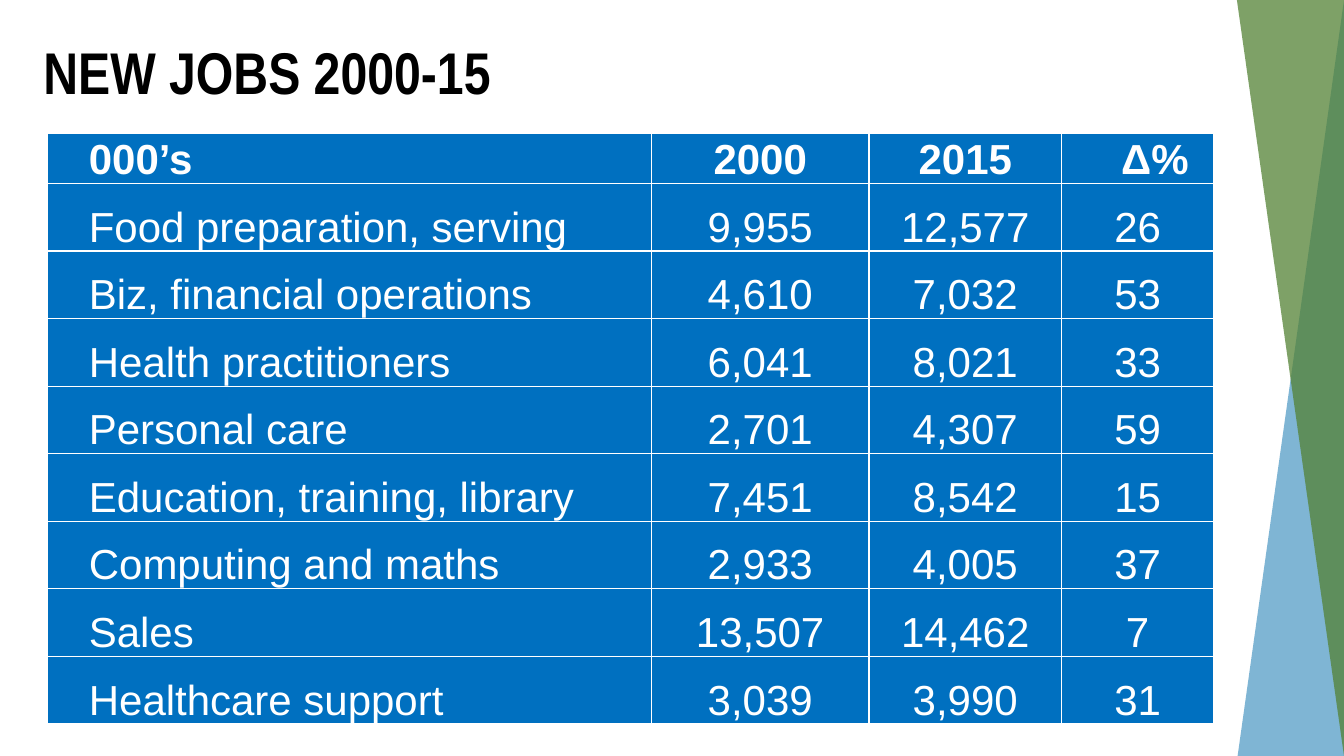
from pptx import Presentation
from pptx.dml.color import RGBColor
from pptx.enum.text import MSO_ANCHOR, MSO_AUTO_SIZE, PP_ALIGN
from pptx.oxml.ns import qn
from pptx.oxml.xmlchemy import OxmlElement
from pptx.util import Pt

LEFT, CENTER = PP_ALIGN.LEFT, PP_ALIGN.CENTER
MIDDLE, BOTTOM = MSO_ANCHOR.MIDDLE, MSO_ANCHOR.BOTTOM
NO_FIT = MSO_AUTO_SIZE.NONE

PAGE_WIDTH, PAGE_HEIGHT = 960, 540
TITLE_ONLY = 5
WHITE, BLACK, TABLE_BLUE = "FFFFFF", "000000", "0070C0"

COLUMN_WIDTHS = [431.3, 155.5, 137.5, 108.7]
HEADER_HEIGHT, ROW_HEIGHT = 36, 48.3
LABEL_INDENT, CHANGE_INDENT = 29.5, 25.5

HEADINGS = ("000’s", "2000", "2015", "Δ%")
JOBS = [
    ("Food preparation, serving", "9,955", "12,577", "26"),
    ("Biz, financial operations", "4,610", "7,032", "53"),
    ("Health practitioners", "6,041", "8,021", "33"),
    ("Personal care", "2,701", "4,307", "59"),
    ("Education, training, library", "7,451", "8,542", "15"),
    ("Computing and maths", "2,933", "4,005", "37"),
    ("Sales", "13,507", "14,462", "7"),
    ("Healthcare support", "3,039", "3,990", "31"),
]


def rgb(color):
    return RGBColor.from_string(color)


def set_values(target, values):
    for name, value in values.items():
        setattr(target, name, value)


def paint(fill, color):
    fill.solid()
    fill.fore_color.rgb = rgb(color)


def write(para, text, font, size, color, bold, align):
    span = para.add_run()
    span.text = text
    para.alignment = align
    set_values(span.font, {"name": font, "size": Pt(size), "bold": bold})
    span.font.color.rgb = rgb(color)


def add_triangle(page, corners, color, opacity):
    points = [(Pt(x), Pt(y)) for x, y in corners]
    builder = page.shapes.build_freeform(*points[0])
    builder.add_line_segments(points[1:], close=True)
    triangle = builder.convert_to_shape()
    triangle.shadow.inherit = False
    paint(triangle.fill, color)
    triangle.line.fill.background()
    alpha = OxmlElement("a:alpha")
    alpha.set("val", str(opacity * 1000))
    triangle._element.spPr.find(".//" + qn("a:srgbClr")).append(alpha)


def add_title(page, text):
    title = page.shapes.title
    set_values(title, {"left": Pt(23.8), "top": Pt(26), "width": Pt(843), "height": Pt(56)})
    set_values(title.text_frame, {
        "word_wrap": True, "auto_size": NO_FIT, "vertical_anchor": MIDDLE,
    })
    para = title.text_frame.paragraphs[0]
    set_values(para, {"line_spacing": 0.9, "space_before": Pt(0)})
    write(para, text, "Arial Narrow", 42, BLACK, True, LEFT)


def add_borders(cell, color, width):
    properties = cell._tc.get_or_add_tcPr()
    for side in ("a:lnL", "a:lnR", "a:lnT", "a:lnB"):
        line = OxmlElement(side)
        line.set("w", str(Pt(width)))
        fill = OxmlElement("a:solidFill")
        shade = OxmlElement("a:srgbClr")
        shade.set("val", color)
        fill.append(shade)
        line.append(fill)
        properties.append(line)


def fill_cell(cell, text, bold, align, indent):
    add_borders(cell, WHITE, 1)
    paint(cell.fill, TABLE_BLUE)
    set_values(cell, {
        "margin_left": Pt(indent), "margin_right": Pt(0.7),
        "margin_top": Pt(0.7), "margin_bottom": Pt(0),
        "vertical_anchor": BOTTOM,
    })
    write(cell.text_frame.paragraphs[0], text, "Arial", 30, WHITE, bold, align)


def add_jobs_table(page):
    rows = [HEADINGS] + JOBS
    heights = [HEADER_HEIGHT] + [ROW_HEIGHT] * len(JOBS)
    frame = page.shapes.add_table(
        len(rows), len(HEADINGS), Pt(34), Pt(95),
        Pt(sum(COLUMN_WIDTHS)), Pt(sum(heights)))
    table = frame.table
    set_values(table, {"first_row": False, "horz_banding": False})
    for column, width in zip(table.columns, COLUMN_WIDTHS):
        column.width = Pt(width)
    for row, height in zip(table.rows, heights):
        row.height = Pt(height)
    for r, values in enumerate(rows):
        for c, text in enumerate(values):
            indent = 0.7
            if c == 0:
                indent = LABEL_INDENT
            elif text == HEADINGS[-1]:
                indent = CHANGE_INDENT
            fill_cell(table.cell(r, c), text, r == 0, CENTER if c else LEFT, indent)


def main():
    deck = Presentation()
    set_values(deck, {"slide_width": Pt(PAGE_WIDTH), "slide_height": Pt(PAGE_HEIGHT)})
    page = deck.slides.add_slide(deck.slide_layouts[TITLE_ONLY])
    paint(page.background.fill, WHITE)
    top_right, bottom_right = (PAGE_WIDTH, 0), (PAGE_WIDTH, PAGE_HEIGHT)
    add_triangle(page, [(884, PAGE_HEIGHT), bottom_right, top_right], "006CAB", 50)
    add_triangle(page, [(883.5, 0), top_right, bottom_right], "548235", 75)
    add_title(page, "NEW JOBS 2000-15")
    add_jobs_table(page)
    deck.save("out.pptx")


if __name__ == "__main__":
    main()
